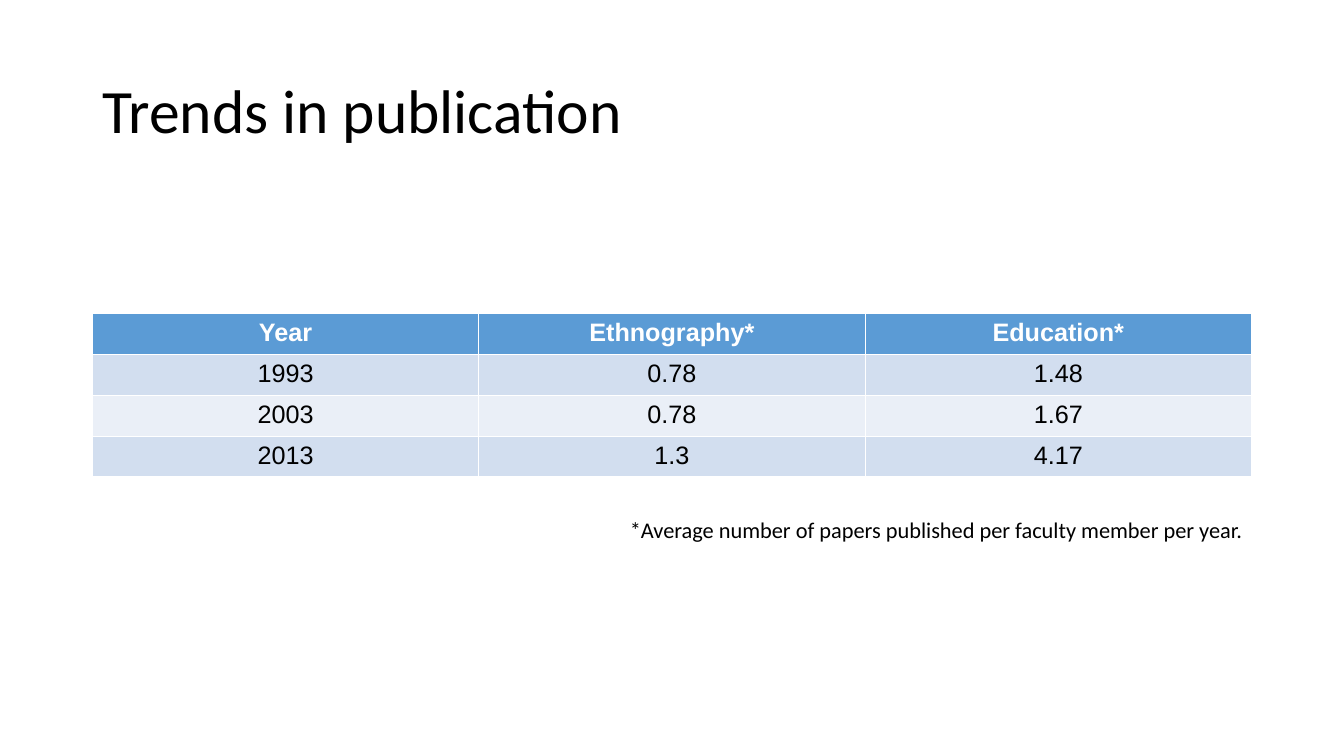
"""Build the slide on trends in publication."""
from dataclasses import dataclass

from pptx import Presentation
from pptx.dml.color import RGBColor as Rgb
from pptx.enum.text import MSO_ANCHOR as Anchor, PP_ALIGN as Align
from pptx.util import Pt

TITLE = "Trends in publication"
HEAD = ("Year", "Ethnography*", "Education*")
DATA = [
    ("1993", "0.78", "1.48"),
    ("2003", "0.78", "1.67"),
    ("2013", "1.3", "4.17"),
]
NOTE = "*Average number of papers published per faculty member per year."


@dataclass(frozen=True)
class Theme:
    """Hold the colours, fonts and type sizes."""
    ink: str = "000000"
    white: str = "FFFFFF"
    head: str = "5B9BD5"
    bands: tuple = ("D2DEEF", "EAEFF7")
    sans: str = "Calibri"
    grid: str = "Arial"
    title: int = 44
    cell: int = 18
    note: int = 16


THEME = Theme()
WIDE, HIGH = 960, 540
LEFT = 66
SPAN = WIDE - 2 * LEFT
TOP, ROW = 224, 29.2


def style(para, size, face, color, bold=False):
    """Format every run of a paragraph."""
    for run in para.runs:
        font = run.font
        font.size, font.name, font.bold = Pt(size), face, bold
        font.color.rgb = Rgb.from_string(color)


def label(slide, text, box, size):
    """Add a wrapped text box and return its frame."""
    frame = slide.shapes.add_textbox(*map(Pt, box)).text_frame
    frame.word_wrap = True
    frame.text = text
    style(frame.paragraphs[0], size, THEME.sans, THEME.ink)
    return frame


def fill_row(cells, texts, back, color, bold):
    """Write and colour one table row."""
    for cell, text in zip(cells, texts):
        cell.text = text
        cell.fill.solid()
        cell.fill.fore_color.rgb = Rgb.from_string(back)
        para = cell.text_frame.paragraphs[0]
        para.alignment = Align.CENTER
        style(para, THEME.cell, THEME.grid, color, bold)


def add_grid(slide):
    """Add the table of papers by year."""
    count = len(DATA) + 1
    box = (LEFT, TOP, SPAN, ROW * count)
    table = slide.shapes.add_table(count, len(HEAD), *map(Pt, box)).table
    for row in table.rows:
        row.height = Pt(ROW)
    fill_row(table.rows[0].cells, HEAD, THEME.head, THEME.white, True)
    for i, texts in enumerate(DATA):
        back = THEME.bands[i % len(THEME.bands)]
        fill_row(table.rows[i + 1].cells, texts, back, THEME.ink, False)


def main():
    """Compose and save the slide."""
    deck = Presentation()
    deck.slide_width, deck.slide_height = Pt(WIDE), Pt(HIGH)
    slide = deck.slides.add_slide(deck.slide_layouts[6])
    title = label(slide, TITLE, (LEFT, 28.75, SPAN, 104.4), THEME.title)
    title.vertical_anchor = Anchor.MIDDLE
    title.paragraphs[0].line_spacing = 0.9
    add_grid(slide)
    label(slide, NOTE, (442.8, 365, 512, 26.7), THEME.note)
    deck.save("out.pptx")


if __name__ == "__main__":
    main()
